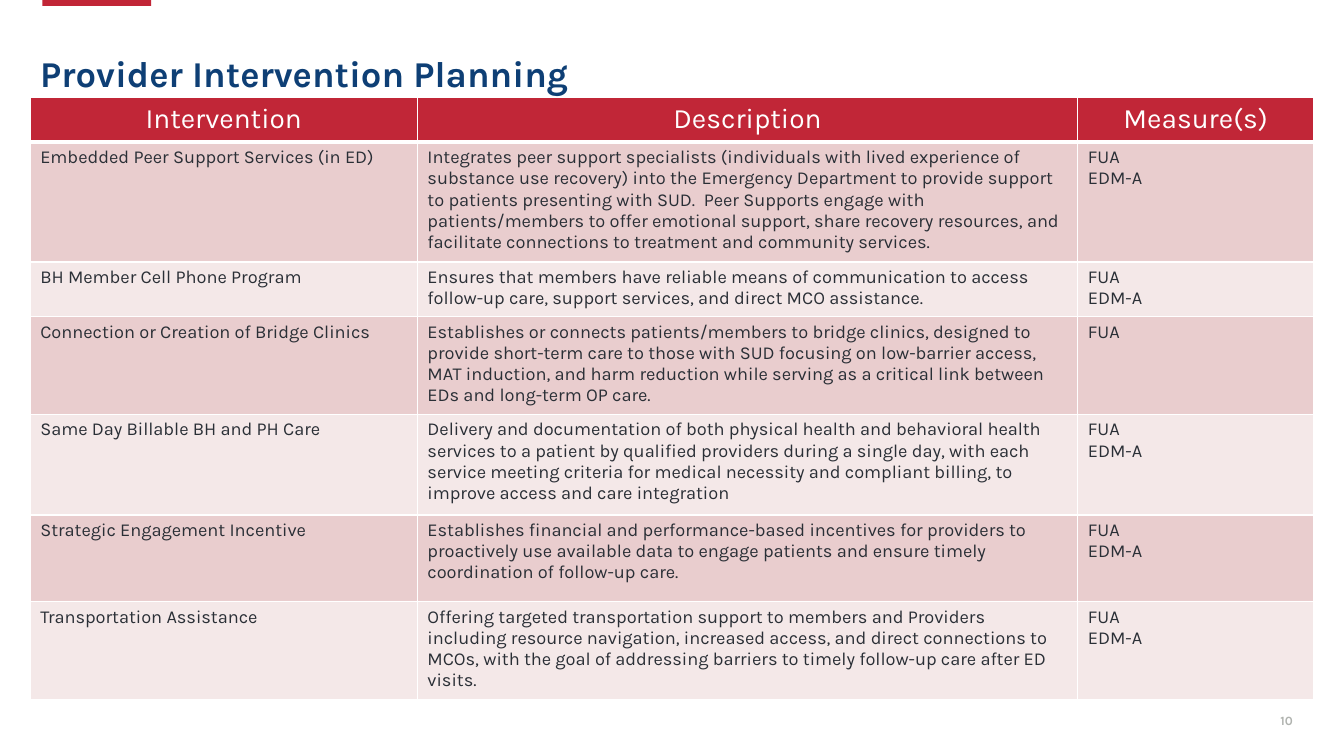
from lxml import etree
from pptx import Presentation
from pptx.dml.color import RGBColor
from pptx.enum import shapes, text
from pptx.oxml.ns import qn
from pptx.util import Inches, Pt

WHITE, RED, NAVY, INK, GRAY = "FFFFFF", "C12637", "0E3F75", "2A2F36", "B0B3AF"
BANDS = ["E9CDCE", "F4E8E8"]
LEFT, RIGHT = text.PP_ALIGN.LEFT, text.PP_ALIGN.RIGHT
CENTER = text.PP_ALIGN.CENTER


def write(frame, words, size, color, bold=False, align=LEFT, lead=None):
    """Fill a text frame, one paragraph for each line of words."""
    frame.word_wrap = True
    for i, line in enumerate(words.split("\n")):
        para = frame.add_paragraph() if i else frame.paragraphs[0]
        para.alignment = align
        if lead:
            para.line_spacing = lead
        run = para.add_run()
        run.text = line
        run.font.name = "Karla"
        run.font.size = Pt(size)
        run.font.bold = bold
        run.font.color.rgb = RGBColor.from_string(color)


def paint(cell, color, base):
    """Give a cell white borders, the lower one base points wide, and a fill."""
    props = cell._tc.get_or_add_tcPr()
    for side, width in zip(["lnL", "lnR", "lnT", "lnB"], [1, 1, 1, base]):
        line = etree.SubElement(props, qn("a:" + side), w=str(Pt(width)))
        solid = etree.SubElement(line, qn("a:solidFill"))
        etree.SubElement(solid, qn("a:srgbClr"), val=WHITE)
    cell.fill.solid()
    cell.fill.fore_color.rgb = RGBColor.from_string(color)


deck = Presentation()
deck.slide_width, deck.slide_height = Inches(13.33), Inches(7.5)
slide = deck.slides.add_slide(deck.slide_layouts[6])

bar = slide.shapes.add_shape(shapes.MSO_SHAPE.RECTANGLE, Inches(0.42),
                             Inches(-0.04), Inches(1.08), Inches(0.1))
bar.shadow.inherit = False
bar.fill.solid()
bar.fill.fore_color.rgb = RGBColor.from_string(RED)
bar.line.fill.background()

page = slide.shapes.add_textbox(Inches(9.92), Inches(6.95), Inches(3), Inches(0.4))
page.text_frame.vertical_anchor = text.MSO_ANCHOR.MIDDLE
write(page.text_frame, "10", 9, GRAY, bold=True, align=RIGHT)

BOTH = "FUA\nEDM-A"
rows = [
    (0.44, "Intervention", "Description", "Measure(s)"),
    (1.19, "Embedded Peer Support Services (in ED)",
     "Integrates peer support specialists (individuals with lived experience of "
     "substance use recovery) into the Emergency Department to provide support to "
     "patients presenting with SUD.  Peer Supports engage with patients/members to "
     "offer emotional support, share recovery resources, and facilitate connections "
     "to treatment and community services.", BOTH),
    (0.54, "BH Member Cell Phone Program",
     "Ensures that members have reliable means of communication to access follow-up "
     "care, support services, and direct MCO assistance.", BOTH),
    (0.97, "Connection or Creation of Bridge Clinics",
     "Establishes or connects patients/members to bridge clinics, designed to provide "
     "short-term care to those with SUD focusing on low-barrier access, MAT induction, "
     "and harm reduction while serving as a critical link between EDs and long-term "
     "OP care.", "FUA"),
    (1, "Same Day Billable BH and PH Care",
     "Delivery and documentation of both physical health and behavioral health "
     "services to a patient by qualified providers during a single day, with each "
     "service meeting criteria for medical necessity and compliant billing, to "
     "improve access and care integration", BOTH),
    (0.86, "Strategic Engagement Incentive",
     "Establishes financial and performance-based incentives for providers to "
     "proactively use available data to engage patients and ensure timely "
     "coordination of follow-up care.", BOTH),
    (0.96, "Transportation Assistance",
     "Offering targeted transportation support to members and Providers including "
     "resource navigation, increased access, and direct connections to MCOs, with the "
     "goal of addressing barriers to timely follow-up care after ED visits.", BOTH),
]
widths = [3.84, 6.55, 2.34]
table = slide.shapes.add_table(
    len(rows), len(widths), Inches(0.3), Inches(0.97), Inches(sum(widths)),
    Inches(sum(row[0] for row in rows))).table
for col, width in zip(table.columns, widths):
    col.width = Inches(width)
for r, (height, *words) in enumerate(rows):
    table.rows[r].height = Inches(height)
    for c, word in enumerate(words):
        cell = table.cell(r, c)
        if r == 0:
            paint(cell, RED, 3)
            write(cell.text_frame, word, 20, WHITE, align=CENTER)
        else:
            paint(cell, BANDS[(r - 1) % 2], 1)
            write(cell.text_frame, word, 13, INK)

title = slide.shapes.add_textbox(Inches(0.3), Inches(0.51), Inches(7.35), Inches(0.56))
write(title.text_frame, "Provider Intervention Planning", 26, NAVY, bold=True, lead=0.9)

deck.save("out.pptx")
